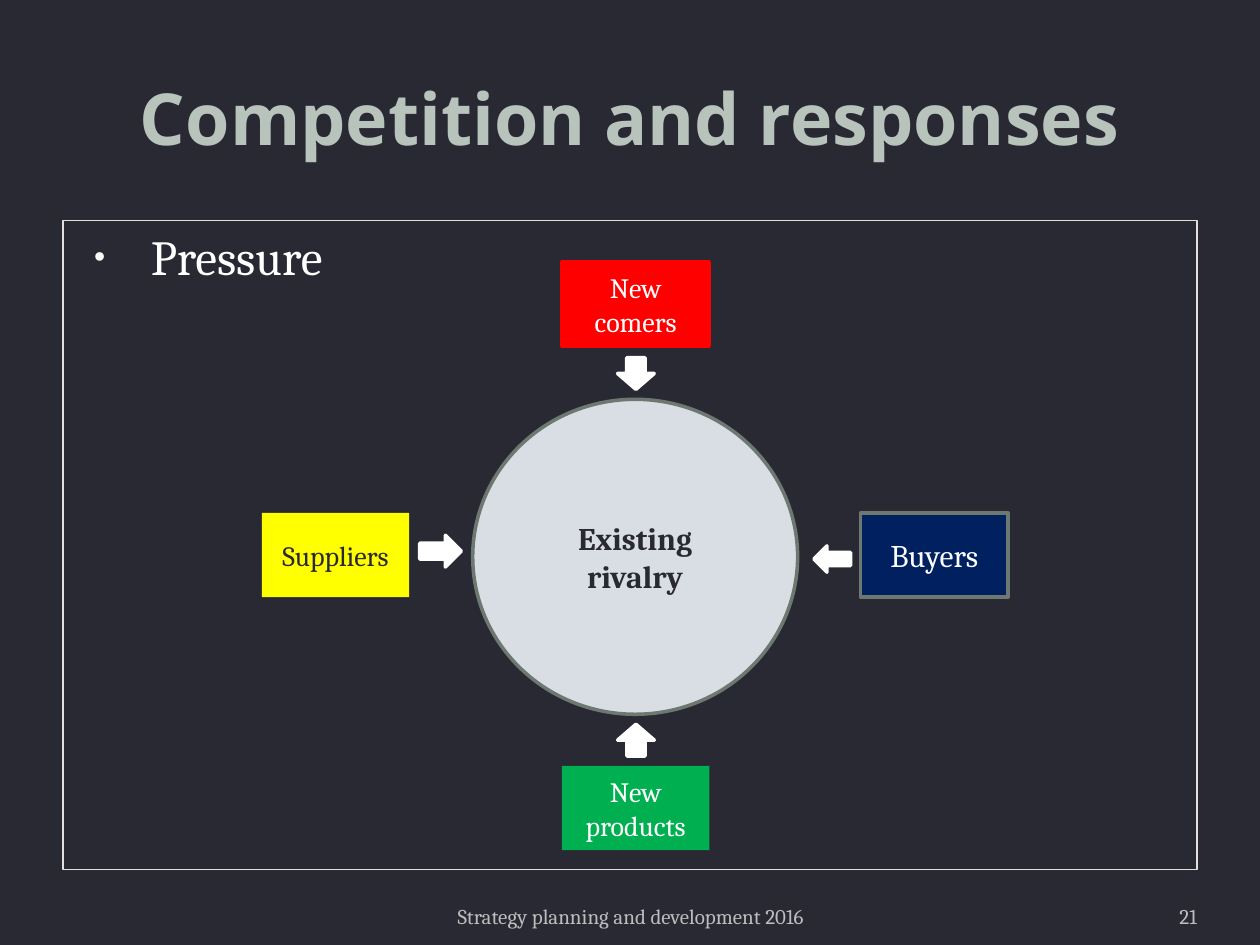
from lxml.etree import SubElement
from pptx import Presentation
from pptx.dml.color import RGBColor
from pptx.enum.shapes import MSO_SHAPE
from pptx.enum.text import MSO_ANCHOR, PP_ALIGN
from pptx.oxml.ns import qn
from pptx.util import Cm, Pt

HUES = {
    "back": "292934", "title": "B7C3BB", "frame": "E4DFDC", "dot": "F9F9F9",
    "white": "FFFFFF", "disc": "D9DEE4", "edge": "6D7871", "red": "FF0000",
    "green": "00B050", "navy": "002060", "yellow": "FFFF00", "foot": "BDBDBD",
}
BOX = (2.97, 1.7)
# left, top, text, size, text hue, fill, line
BOXES = [
    (11.33, 5.28, "New comers", 16, "white", "red", "red"),
    (11.33, 15.44, "New products", 16, "white", "green", None),
    (17.35, 10.34, "Buyers", 18, "white", "navy", "edge"),
    (5.28, 10.34, "Suppliers", 16, "back", "yellow", None),
]
# left, top, width, height, turn
ARROWS = [
    (12.45, 7.21, 0.74, 0.64, 0),
    (8.56, 10.69, 0.64, 0.84, 270),
    (16.51, 10.9, 0.53, 0.74, 90),
    (12.45, 14.6, 0.74, 0.64, 180),
]


def hue(name):
    return RGBColor.from_string(HUES[name])


def put(item, values):
    for key, value in values.items():
        setattr(item, key, value)


def write(shape, text, size, color, bold=False, font="Cambria",
          align=PP_ALIGN.CENTER, anchor=MSO_ANCHOR.MIDDLE, **frame):
    """Fill a shape with one formatted paragraph and return it."""
    put(shape.text_frame,
        {"word_wrap": True, "vertical_anchor": anchor, **frame})
    para = shape.text_frame.paragraphs[0]
    para.alignment = align
    run = para.add_run()
    run.text = text
    put(run.font, {"name": font, "size": Pt(size), "bold": bold})
    run.font.color.rgb = hue(color)
    return para


def add_label(slide, area, text, size, color, **style):
    box = slide.shapes.add_textbox(*map(Cm, area))
    write(box, text, size, color, **style)


def add_form(slide, kind, area, fill=None, line=None, width=2):
    form = slide.shapes.add_shape(kind, *map(Cm, area))
    form.shadow.inherit = False
    if fill:
        form.fill.solid()
        form.fill.fore_color.rgb = hue(fill)
    else:
        form.fill.background()
    if line:
        form.line.color.rgb = hue(line)
        form.line.width = Pt(width)
    else:
        form.line.fill.background()
    return form


def add_dot(para):
    """Give the paragraph a hanging round bullet."""
    para.space_before = Pt(5.6)
    props = para._p.get_or_add_pPr()
    props.set("marL", str(Cm(1.52)))
    props.set("indent", str(Cm(-1.14)))
    tint = SubElement(props, qn("a:buClr"))
    SubElement(tint, qn("a:srgbClr"), val=HUES["dot"])
    SubElement(props, qn("a:buSzPct"), val="65000")
    SubElement(props, qn("a:buFont"), typeface="Arial")
    SubElement(props, qn("a:buChar"), char="•")


def add_forces(slide):
    """Draw the rivalry disc with the four forces that press on it."""
    disc = add_form(slide, MSO_SHAPE.OVAL, (9.53, 8.05, 6.55, 6.35),
                    "disc", "edge")
    write(disc, "Existing rivalry", 18, "back", bold=True)
    for left, top, text, size, color, fill, line in BOXES:
        box = add_form(slide, MSO_SHAPE.RECTANGLE, (left, top, *BOX),
                       fill, line)
        write(box, text, size, color)
    for *area, turn in ARROWS:
        arrow = add_form(slide, MSO_SHAPE.DOWN_ARROW, area, "white", "white")
        arrow.rotation = turn


def main():
    deck = Presentation()
    put(deck, {"slide_width": Cm(25.4), "slide_height": Cm(19.05)})
    slide = deck.slides.add_slide(deck.slide_layouts[6])
    slide.background.fill.solid()
    slide.background.fill.fore_color.rgb = hue("back")

    add_label(slide, (1.27, 0.76, 22.86, 3.18), "Competition and responses",
              41, "title", bold=True, font="Noto Sans")
    frame = add_form(slide, MSO_SHAPE.RECTANGLE, (1.27, 4.45, 22.86, 13.08),
                     line="frame", width=0.75)
    add_dot(write(frame, "Pressure", 28, "white", align=PP_ALIGN.LEFT,
                  anchor=MSO_ANCHOR.TOP))
    add_forces(slide)
    add_label(slide, (8.69, 17.83, 8.05, 1.02),
              "Strategy planning and development 2016", 12, "foot",
              anchor=MSO_ANCHOR.BOTTOM)
    add_label(slide, (22.01, 17.83, 2.12, 1.02), "21", 12, "foot",
              align=PP_ALIGN.RIGHT, anchor=MSO_ANCHOR.BOTTOM,
              margin_left=0, margin_right=0)
    deck.save("out.pptx")


if __name__ == "__main__":
    main()
